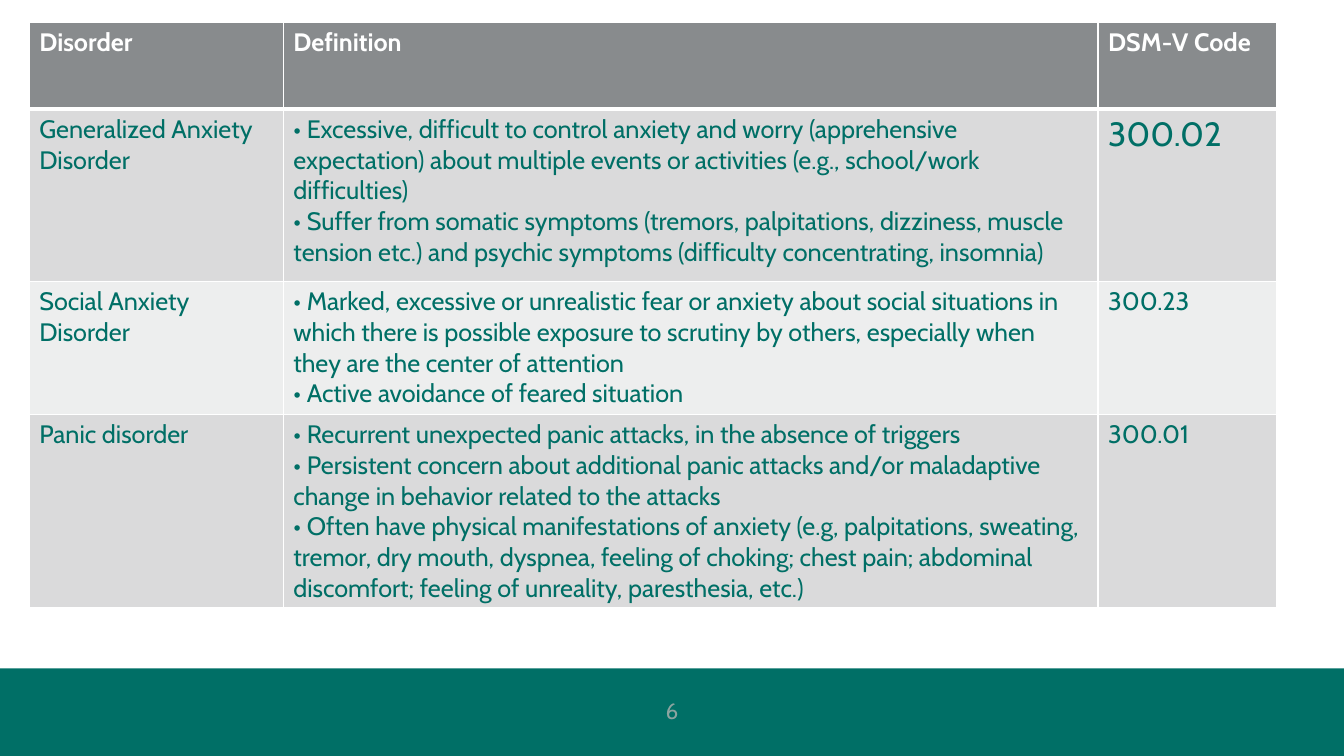
from lxml import etree
from pptx import Presentation
from pptx.dml.color import RGBColor
from pptx.enum.shapes import MSO_SHAPE
from pptx.enum.text import MSO_ANCHOR, PP_ALIGN
from pptx.oxml.ns import qn
from pptx.util import Inches, Pt

RECT = MSO_SHAPE.RECTANGLE
MIDDLE = MSO_ANCHOR.MIDDLE
CENTER = PP_ALIGN.CENTER

WHITE = RGBColor(0xFF, 0xFF, 0xFF)
GREEN = RGBColor(0x00, 0x6F, 0x66)
SAGE = RGBColor(0x8C, 0xA4, 0xA0)
GREY = RGBColor(0x88, 0x8B, 0x8D)
BANDS = [RGBColor(0xED, 0xEE, 0xEE), RGBColor(0xDA, 0xDA, 0xDB)]

FONT = "Cabin"
WIDTHS = [2.52, 8.08, 1.77]
HEIGHTS = [0.86, 1.71, 1.32, 1.92]
ROWS = [
    [["Disorder"], ["Definition"], ["DSM-V Code"]],
    [
        ["Generalized Anxiety Disorder"],
        [
            "• Excessive, difficult to control anxiety and worry (apprehensive expectation) "
            "about multiple events or activities (e.g., school/work difficulties)",
            "• Suffer from somatic symptoms (tremors, palpitations, dizziness, muscle "
            "tension etc.) and psychic symptoms (difficulty concentrating, insomnia)",
        ],
        ["300.02"],
    ],
    [
        ["Social Anxiety Disorder"],
        [
            "• Marked, excessive or unrealistic fear or anxiety about social situations in "
            "which there is possible exposure to scrutiny by others, especially when "
            "they are the center of attention",
            "• Active avoidance of feared situation",
        ],
        ["300.23"],
    ],
    [
        ["Panic disorder"],
        [
            "• Recurrent unexpected panic attacks, in the absence of triggers",
            "• Persistent concern about additional panic attacks and/or maladaptive "
            "change in behavior related to the attacks",
            "• Often have physical manifestations of anxiety (e.g, palpitations, sweating, "
            "tremor, dry mouth, dyspnea, feeling of choking; chest pain; abdominal "
            "discomfort; feeling of unreality, paresthesia, etc.)",
        ],
        ["300.01"],
    ],
]
BIG = "300.02"


def style(para, size, color, bold=False):
    font = para.font
    font.name = FONT
    font.size = Pt(size)
    font.bold = bold
    font.color.rgb = color


def add_edges(cell, row):
    props = cell._tc.get_or_add_tcPr()
    thick = {"T": 3 if row == 1 else 1, "B": 3 if row == 0 else 1}
    for index, side in enumerate("LRTB"):
        line = etree.Element(qn("a:ln" + side), w=str(Pt(thick.get(side, 1))))
        fill = etree.SubElement(line, qn("a:solidFill"))
        etree.SubElement(fill, qn("a:srgbClr"), val=str(WHITE))
        props.insert(index, line)


def fill_cell(cell, lines, row):
    head = row == 0
    cell.fill.solid()
    cell.fill.fore_color.rgb = GREY if head else BANDS[row % 2]
    add_edges(cell, row)
    cell.text = "\n".join(lines)
    for para in cell.text_frame.paragraphs:
        size = 24 if para.text == BIG else 18
        style(para, size, WHITE if head else GREEN, head)


def add_grid(slide, left, top):
    box = [Inches(n) for n in (left, top, sum(WIDTHS), sum(HEIGHTS))]
    table = slide.shapes.add_table(len(ROWS), len(WIDTHS), *box).table
    for column, width in zip(table.columns, WIDTHS):
        column.width = Inches(width)
    for row, (cells, height) in enumerate(zip(ROWS, HEIGHTS)):
        table.rows[row].height = Inches(height)
        for col, lines in enumerate(cells):
            fill_cell(table.cell(row, col), lines, row)


def add_footer(slide, left, top, width, height):
    bar = slide.shapes.add_shape(
        RECT, Inches(left), Inches(top), Inches(width), Inches(height)
    )
    bar.shadow.inherit = False
    bar.fill.solid()
    bar.fill.fore_color.rgb = GREEN
    bar.line.fill.background()

    label = slide.shapes.add_textbox(
        Inches(left + (width - 3) / 2), Inches(top + 0.22), Inches(3), Inches(0.4)
    )
    frame = label.text_frame
    frame.word_wrap = True
    frame.vertical_anchor = MIDDLE
    frame.text = "6"
    para = frame.paragraphs[0]
    para.alignment = CENTER
    style(para, 16, SAGE)


def main():
    deck = Presentation()
    deck.slide_width = Inches(13.33)
    deck.slide_height = Inches(7.5)
    slide = deck.slides.add_slide(deck.slide_layouts[6])
    add_footer(slide, 0, 6.63, 13.33, 0.89)
    add_grid(slide, 0.29, 0.22)
    deck.save("out.pptx")


if __name__ == "__main__":
    main()
